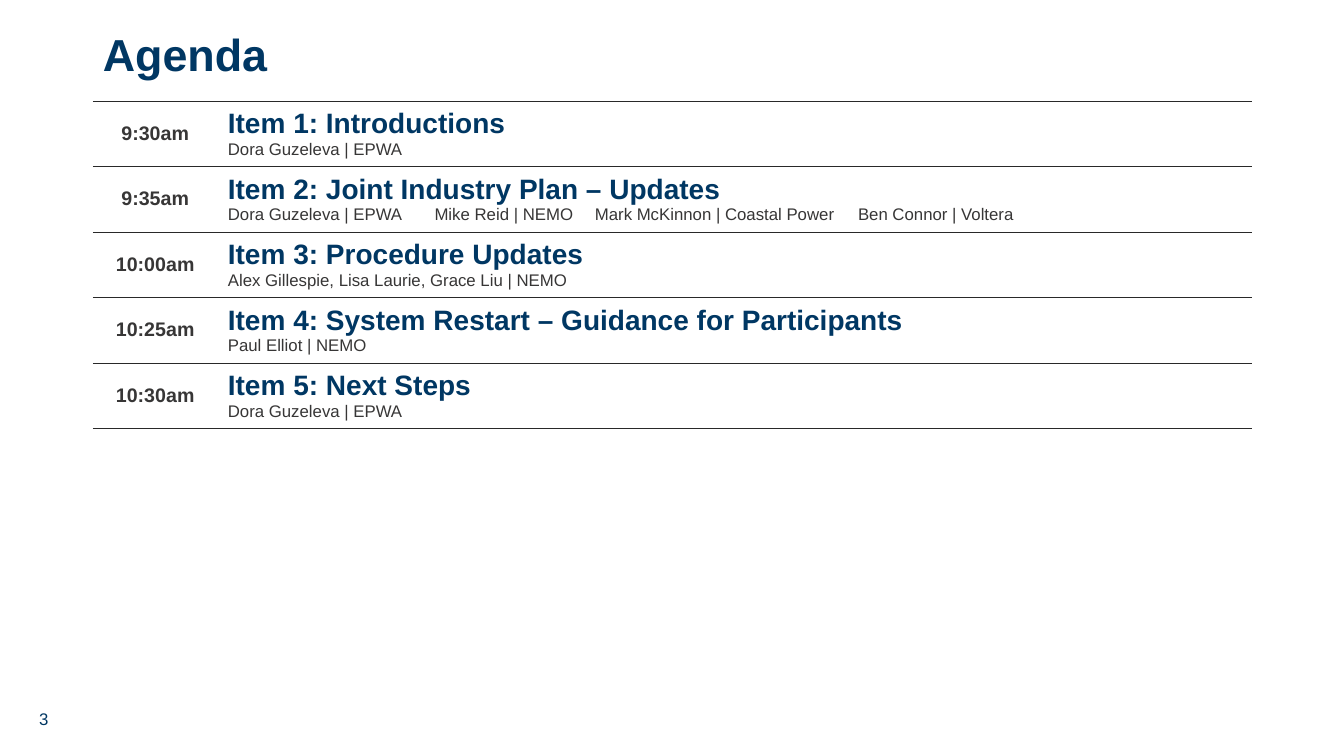
from dataclasses import dataclass

from lxml import etree
from pptx import Presentation
from pptx import util as u
from pptx.dml.color import RGBColor
from pptx.enum import text
from pptx.oxml import ns

SCALE = 9144  # EMU per px, 100 px to the inch
COLORS = {"navy": "003763", "body": "373636", "rule": "292929"}
FORMATS = {
    "title": {"size": u.Pt(32), "bold": True, "color": "navy"},
    "time": {"size": u.Pt(14), "bold": True, "color": "body"},
    "item": {"size": u.Pt(20), "bold": True, "color": "navy"},
    "speaker": {"size": u.Pt(12), "bold": False, "color": "body"},
    "page": {"size": u.Pt(12), "bold": False, "color": "navy"},
}
LEFT, WIDTH, TIME_WIDTH, ROW_HEIGHT = 92, 1150, 134, 65
SPEAKER_TABS = (205, 364, 625)


@dataclass
class AgendaItem:
    time: str
    heading: str
    speakers: tuple[str, ...]


AGENDA = [
    AgendaItem("9:30am", "Item 1: Introductions", ("Dora Guzeleva | EPWA",)),
    AgendaItem("9:35am", "Item 2: Joint Industry Plan – Updates",
               ("Dora Guzeleva | EPWA", "Mike Reid | NEMO",
                "Mark McKinnon | Coastal Power", "Ben Connor | Voltera")),
    AgendaItem("10:00am", "Item 3: Procedure Updates",
               ("Alex Gillespie, Lisa Laurie, Grace Liu | NEMO",)),
    AgendaItem("10:25am", "Item 4: System Restart – Guidance for Participants",
               ("Paul Elliot | NEMO",)),
    AgendaItem("10:30am", "Item 5: Next Steps", ("Dora Guzeleva | EPWA",)),
]


def px(n: int) -> int:
    return u.Emu(n * SCALE)


def place(shape, left: int, top: int, width: int, height: int) -> None:
    for name, value in zip(("left", "top", "width", "height"),
                           (left, top, width, height)):
        setattr(shape, name, px(value))


def write(p, content: str, style: str, align=text.PP_ALIGN.LEFT) -> None:
    p.alignment = align
    r = p.add_run()
    r.text = content
    r.font.name = "Arial"
    for name, value in FORMATS[style].items():
        if name == "color":
            r.font.color.rgb = RGBColor.from_string(COLORS[value])
        else:
            setattr(r.font, name, value)


def add_tabs(p, stops: tuple[int, ...]) -> None:
    tabs = etree.SubElement(p._p.get_or_add_pPr(), ns.qn("a:tabLst"))
    for stop in stops:
        etree.SubElement(tabs, ns.qn("a:tab"), pos=str(px(stop)), algn="l")


def format_cell(cell) -> None:
    margins = {"margin_left": 0, "margin_top": 7,
               "margin_right": 10, "margin_bottom": 7}
    for name, value in margins.items():
        setattr(cell, name, px(value))
    cell.vertical_anchor = text.MSO_ANCHOR.MIDDLE
    # Rules above and below only
    tc_pr = cell._tc.get_or_add_tcPr()
    for side in ("lnL", "lnR", "lnT", "lnB"):
        ln = etree.SubElement(tc_pr, ns.qn(f"a:{side}"), w=str(u.Pt(0.25)))
        if side in ("lnT", "lnB"):
            fill = etree.SubElement(ln, ns.qn("a:solidFill"))
            etree.SubElement(fill, ns.qn("a:srgbClr"), val=COLORS["rule"])
        else:
            etree.SubElement(ln, ns.qn("a:noFill"))
    cell.fill.background()


def add_agenda(s, items: list[AgendaItem]) -> None:
    table = s.shapes.add_table(len(items), 2, px(LEFT), px(100), px(WIDTH),
                               px(ROW_HEIGHT * len(items))).table
    table.first_row = table.horz_banding = False
    for column, width in zip(table.columns, (TIME_WIDTH, WIDTH - TIME_WIDTH)):
        column.width = px(width)
    for row, item in zip(table.rows, items):
        row.height = px(ROW_HEIGHT)
        time_cell, item_cell = row.cells
        for cell in (time_cell, item_cell):
            format_cell(cell)
        write(time_cell.text_frame.paragraphs[0], item.time, "time",
              text.PP_ALIGN.CENTER)
        tf = item_cell.text_frame
        write(tf.paragraphs[0], item.heading, "item")
        p = tf.add_paragraph()
        if len(item.speakers) > 1:
            add_tabs(p, SPEAKER_TABS)
        write(p, "\t".join(item.speakers), "speaker")


def main() -> None:
    prs = Presentation()
    prs.slide_width, prs.slide_height = px(1333), px(750)
    s = prs.slides.add_slide(prs.slide_layouts[5])

    # Title
    title = s.shapes.title
    place(title, LEFT, 28, WIDTH, 77)
    tf = title.text_frame
    tf.vertical_anchor = text.MSO_ANCHOR.TOP
    tf.auto_size = text.MSO_AUTO_SIZE.NONE
    tf.paragraphs[0].line_spacing = 0.9
    write(tf.paragraphs[0], "Agenda", "title")

    # Timetable
    add_agenda(s, AGENDA)

    # Page number
    page = s.shapes.add_textbox(px(29), px(693), px(300), px(40))
    page.text_frame.word_wrap = True
    page.text_frame.vertical_anchor = text.MSO_ANCHOR.MIDDLE
    write(page.text_frame.paragraphs[0], "3", "page")

    prs.save("out.pptx")


if __name__ == "__main__":
    main()
